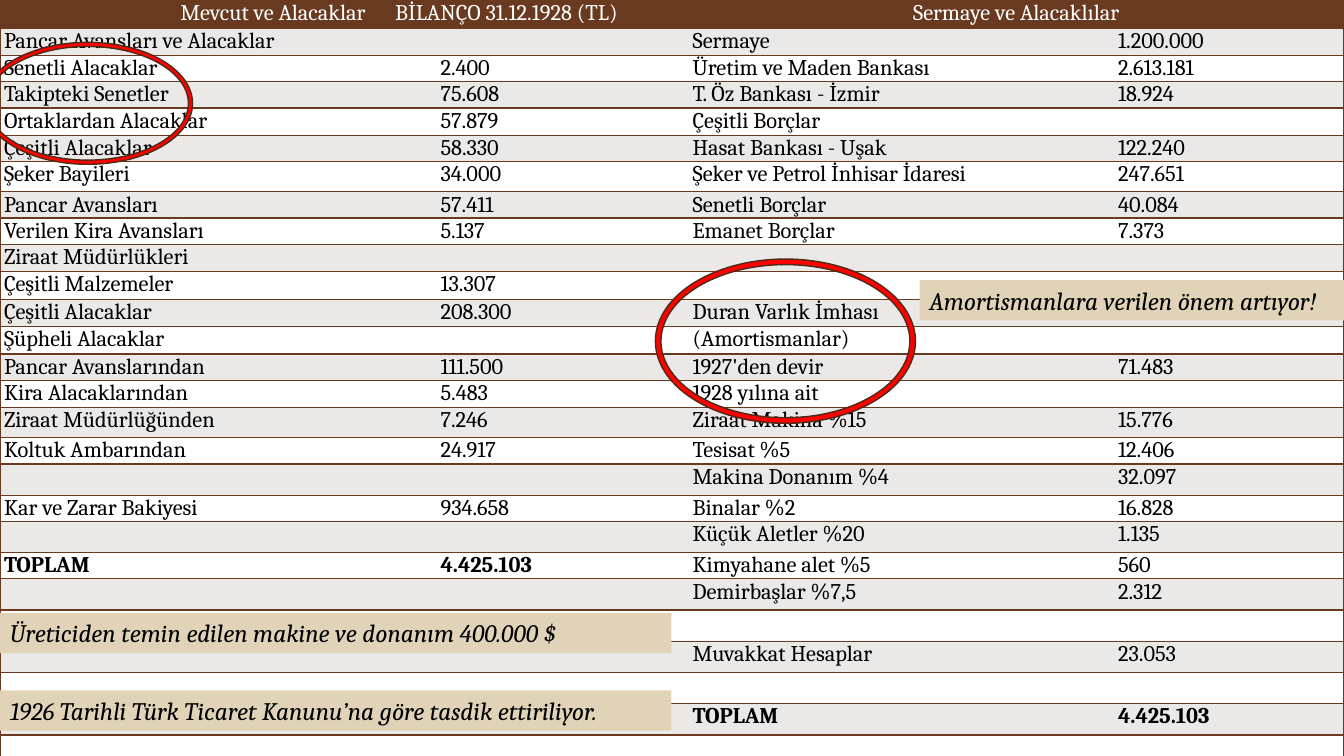
from lxml.etree import SubElement
from pptx import Presentation
from pptx.dml.color import RGBColor
from pptx.enum.shapes import MSO_SHAPE as Shape
from pptx.enum.text import MSO_ANCHOR as Anchor, PP_ALIGN as Align
from pptx.oxml.ns import qn
from pptx.util import Inches, Pt

BROWN, DARK_BROWN, SAND, RED = "6A3A20", "4E2B18", "E1D3B7", "FF0000"
WHITE, BAND, BLACK = "FFFFFF", "EBE8E8", "000000"

ASSETS_HEADING = "\tMevcut ve Alacaklar\tBİLANÇO 31.12.1928 (TL)"
LIABILITIES_HEADING = "Sermaye ve Alacaklılar"
HEADING_TABS = (1.75, 3.88)

ENTRIES = [
    ("Pancar Avansları ve Alacaklar", "", "Sermaye", "1.200.000"),
    ("Senetli Alacaklar", "2.400", "Üretim ve Maden Bankası", "2.613.181"),
    ("Takipteki Senetler", "75.608", "T. Öz Bankası - İzmir", "18.924"),
    ("Ortaklardan Alacaklar", "57.879", "Çeşitli Borçlar", ""),
    ("Çeşitli Alacaklar", "58.330", "Hasat Bankası - Uşak", "122.240"),
    ("Şeker Bayileri", "34.000", "Şeker ve Petrol İnhisar İdaresi", "247.651"),
    ("Pancar Avansları", "57.411", "Senetli Borçlar", "40.084"),
    ("Verilen Kira Avansları", "5.137", "Emanet Borçlar", "7.373"),
    ("Ziraat Müdürlükleri", "", "", ""),
    ("Çeşitli Malzemeler", "13.307", "", ""),
    ("Çeşitli Alacaklar", "208.300", "Duran Varlık İmhası", ""),
    ("Şüpheli Alacaklar", "", "(Amortismanlar)", ""),
    ("Pancar Avanslarından", "111.500", "1927'den devir", "71.483"),
    ("Kira Alacaklarından", "5.483", "1928 yılına ait", ""),
    ("Ziraat Müdürlüğünden", "7.246", "Ziraat Makina %15", "15.776"),
    ("Koltuk Ambarından", "24.917", "Tesisat %5", "12.406"),
    ("", "", "Makina Donanım %4", "32.097"),
    ("Kar ve Zarar Bakiyesi", "934.658", "Binalar %2", "16.828"),
    ("", "", "Küçük Aletler %20", "1.135"),
    ("TOPLAM", "4.425.103", "Kimyahane alet %5", "560"),
    ("", "", "Demirbaşlar %7,5", "2.312"),
    ("", "", "", ""),
    ("", "", "Muvakkat Hesaplar", "23.053"),
    ("", "", "", ""),
    ("", "", "TOPLAM", "4.425.103"),
    ("", "", "", ""),
]
TOTALS = ("TOPLAM", "4.425.103")

COLUMN_WIDTHS = (4.33, 2.5, 4.22, 2.28)
HEADING_HEIGHT, ENTRY_HEIGHT = 0.28, 0.26
TALL_ROWS = {6: 0.3, 15: 0.3, 17: 0.31, 19: 0.31} | {row: 0.31 for row in range(21, 27)}

NOTES = [
    ("Üreticiden temin edilen makine ve donanım 400.000 $", 0, 6.08, 6.66),
    ("1926 Tarihli Türk Ticaret Kanunu’na göre tasdik ettiriliyor.", 0, 6.85, 6.66),
    ("Amortismanlara verilen önem artıyor!", 9.12, 2.78, 4.25),
]
NOTE_HEIGHT = 0.4
RINGS = [(6.5, 2.57, 2.58, 1.63), (-0.17, 0.42, 2.08, 1.21)]
RING_THICKNESS = 0.034


def color(hex_value):
    return RGBColor.from_string(hex_value)


def write(frame, text, size=16, fill=BLACK, bold=False, italic=False, align=Align.LEFT, tabs=()):
    paragraph = frame.paragraphs[0]
    paragraph.alignment = align
    if tabs:
        stops = SubElement(paragraph._p.get_or_add_pPr(), qn("a:tabLst"))
        for stop in tabs:
            SubElement(stops, qn("a:tab"), pos=str(Inches(stop)), algn="l")
    if not text:
        paragraph._p.get_or_add_endParaRPr().set("sz", str(size * 100))
        return
    run = paragraph.add_run()
    run.text = text
    font = run.font
    font.name, font.size, font.bold, font.italic = "Cambria", Pt(size), bold, italic
    font.color.rgb = color(fill)


def format_cell(cell, column, fill):
    cell.margin_left = cell.margin_right = Inches(0.04)
    cell.margin_top = cell.margin_bottom = 0
    drawn_sides = {"lnL": column == 0, "lnR": column == len(COLUMN_WIDTHS) - 1,
                   "lnT": True, "lnB": True}
    properties = cell._tc.get_or_add_tcPr()
    for side, drawn in drawn_sides.items():
        border = SubElement(properties, qn("a:" + side), w=str(Pt(1)))
        if drawn:
            solid = SubElement(border, qn("a:solidFill"))
            SubElement(solid, qn("a:srgbClr"), val=BROWN)
        else:
            SubElement(border, qn("a:noFill"))
    cell.fill.solid()
    cell.fill.fore_color.rgb = color(fill)


def add_balance_sheet(slide):
    heights = [TALL_ROWS.get(row, ENTRY_HEIGHT) for row in range(len(ENTRIES) + 1)]
    heights[0] = HEADING_HEIGHT
    balance = slide.shapes.add_table(
        len(heights), len(COLUMN_WIDTHS), 0, 0,
        Inches(sum(COLUMN_WIDTHS)), Inches(sum(heights))).table
    balance.first_row = balance.horz_banding = False
    for column, width in enumerate(COLUMN_WIDTHS):
        balance.columns[column].width = Inches(width)
    for row, height in enumerate(heights):
        balance.rows[row].height = Inches(height)
        fill = BROWN if row == 0 else BAND if row % 2 else WHITE
        for column in range(len(COLUMN_WIDTHS)):
            format_cell(balance.cell(row, column), column, fill)

    for column in (0, 2):
        balance.cell(0, column).merge(balance.cell(0, column + 1))
    write(balance.cell(0, 0).text_frame, ASSETS_HEADING, fill=WHITE, tabs=HEADING_TABS)
    write(balance.cell(0, 2).text_frame, LIABILITIES_HEADING, fill=WHITE, align=Align.CENTER)
    for row, entry in enumerate(ENTRIES, 1):
        for column, text in enumerate(entry):
            write(balance.cell(row, column).text_frame, text,
                  bold=text in TOTALS, align=Align.JUSTIFY)


def add_filled(slide, preset, box, fill):
    shape = slide.shapes.add_shape(preset, *map(Inches, box))
    shape.shadow.inherit = False
    shape.fill.solid()
    shape.fill.fore_color.rgb = color(fill)
    return shape


def add_note(slide, text, left, top, width):
    note = add_filled(slide, Shape.RECTANGLE, (left, top, width, NOTE_HEIGHT), SAND)
    note.line.fill.background()
    note.text_frame.word_wrap = True
    note.text_frame.vertical_anchor = Anchor.TOP
    write(note.text_frame, text, size=18, italic=True)


def add_ring(slide, box):
    ring = add_filled(slide, Shape.DONUT, box, RED)
    ring.adjustments[0] = RING_THICKNESS
    ring.line.color.rgb = color(DARK_BROWN)
    ring.line.width = Pt(1)


def main():
    deck = Presentation()
    deck.slide_width, deck.slide_height = Inches(13.33), Inches(7.5)
    slide = deck.slides.add_slide(deck.slide_layouts[6])
    add_balance_sheet(slide)
    for note in NOTES:
        add_note(slide, *note)
    for ring in RINGS:
        add_ring(slide, ring)
    deck.save("out.pptx")


if __name__ == "__main__":
    main()
